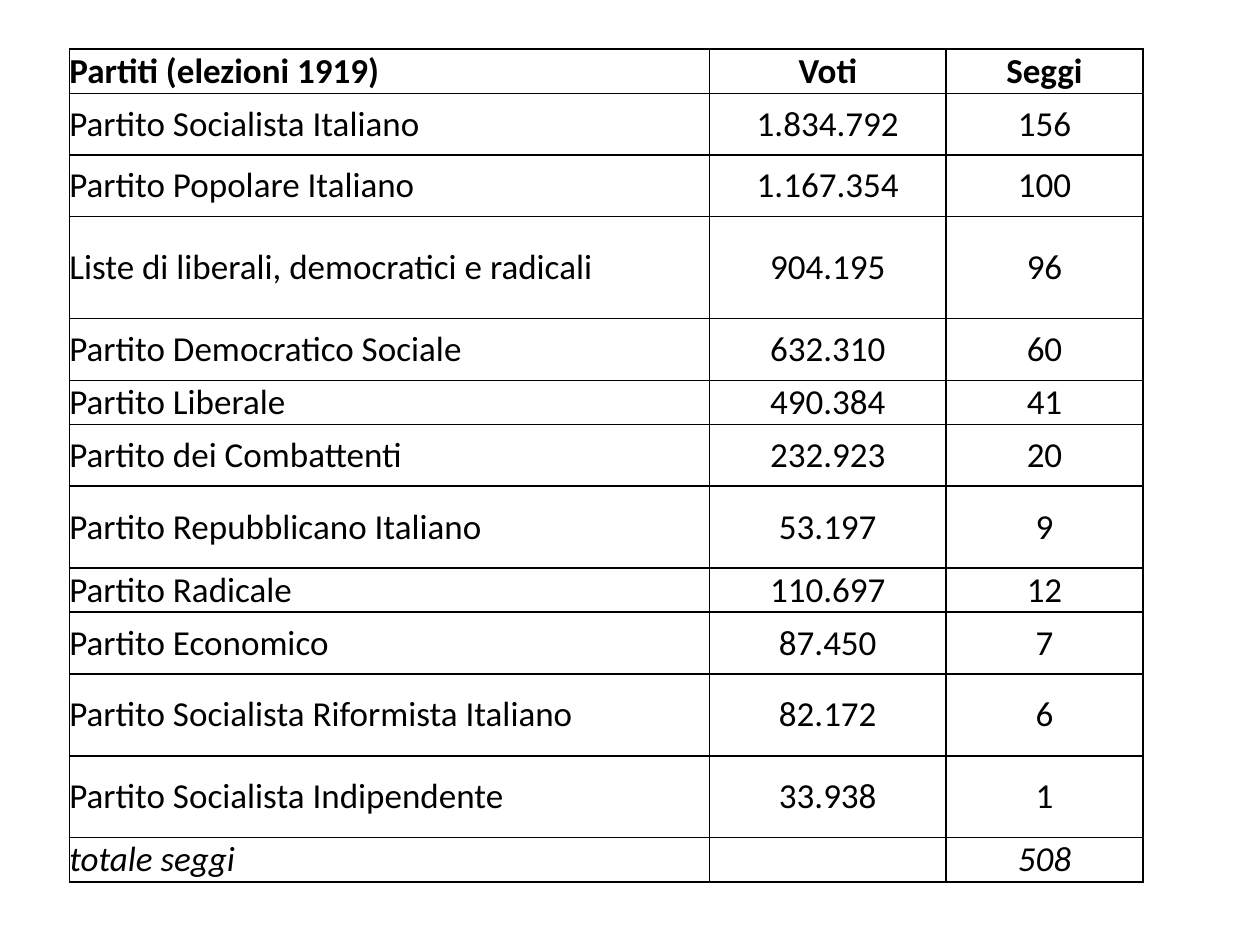
from lxml.etree import SubElement
from pptx import Presentation
from pptx.dml.color import RGBColor
from pptx.enum.text import MSO_ANCHOR as Anchor, PP_ALIGN as Align
from pptx.oxml.ns import qn
from pptx.util import Inches, Pt

# Content: party, votes, seats
HEADER = ("Partiti (elezioni 1919)", "Voti", "Seggi")
RESULTS = [
    ("Partito Socialista Italiano", "1.834.792", "156"),
    ("Partito Popolare Italiano", "1.167.354", "100"),
    ("Liste di liberali, democratici e radicali", "904.195", "96"),
    ("Partito Democratico Sociale", "632.310", "60"),
    ("Partito Liberale", "490.384", "41"),
    ("Partito dei Combattenti", "232.923", "20"),
    ("Partito Repubblicano Italiano", "53.197", "9"),
    ("Partito Radicale", "110.697", "12"),
    ("Partito Economico", "87.450", "7"),
    ("Partito Socialista Riformista Italiano", "82.172", "6"),
    ("Partito Socialista Indipendente", "33.938", "1"),
]
TOTAL = ("totale seggi", "", "508")
ROWS = [HEADER, *RESULTS, TOTAL]

# Layout in inches: each letter gives the height class of one row
LEFT, TOP = 0.55, 0.39
COLUMN_WIDTHS = (5.08, 1.88, 1.56)
HEIGHTS = {"S": 0.35, "M": 0.49, "L": 0.65, "X": 0.81}
ROW_HEIGHTS = [HEIGHTS[size] for size in "SMMXMSMLSMLLS"]
ALIGNMENTS = (Align.JUSTIFY, Align.CENTER, Align.CENTER)

THEME = {"font": "Calibri", "size": Pt(20), "ink": "000000", "border": Pt(1)}
CELL_FORMAT = {
    "margin_left": 0, "margin_right": 0, "margin_top": 0, "margin_bottom": 0,
    "vertical_anchor": Anchor.MIDDLE,
}
TABLE_FORMAT = {"first_row": False, "horz_banding": False}


def set_format(target, values):
    for name, value in values.items():
        setattr(target, name, value)


def add_borders(cell):
    properties = cell._tc.get_or_add_tcPr()
    for side in ("a:lnL", "a:lnR", "a:lnT", "a:lnB"):
        line = SubElement(properties, qn(side), w=str(THEME["border"]))
        fill = SubElement(line, qn("a:solidFill"))
        SubElement(fill, qn("a:srgbClr"), val=THEME["ink"])


def fill_cell(cell, text, alignment, bold, italic):
    set_format(cell, CELL_FORMAT)
    add_borders(cell)
    cell.fill.background()
    cell.text = text
    paragraph = cell.text_frame.paragraphs[0]
    paragraph.alignment = alignment
    set_format(paragraph.font, {"size": THEME["size"]})
    for run in paragraph.runs:
        set_format(run.font, {"name": THEME["font"], "size": THEME["size"],
                              "bold": bold, "italic": italic})
        run.font.color.rgb = RGBColor.from_string(THEME["ink"])


def main():
    deck = Presentation()
    deck.slide_width, deck.slide_height = Inches(10), Inches(7.5)
    slide = deck.slides.add_slide(deck.slide_layouts[6])

    # Election table
    election = slide.shapes.add_table(
        len(ROWS), len(HEADER), Inches(LEFT), Inches(TOP),
        Inches(sum(COLUMN_WIDTHS)), Inches(sum(ROW_HEIGHTS))).table
    set_format(election, TABLE_FORMAT)
    for column, width in zip(election.columns, COLUMN_WIDTHS):
        column.width = Inches(width)

    # Rows: bold header, plain results, italic total
    for row, height, texts in zip(election.rows, ROW_HEIGHTS, ROWS):
        row.height = Inches(height)
        for cell, text, alignment in zip(row.cells, texts, ALIGNMENTS):
            fill_cell(cell, text, alignment, texts is HEADER, texts is TOTAL)

    deck.save("out.pptx")


if __name__ == "__main__":
    main()
